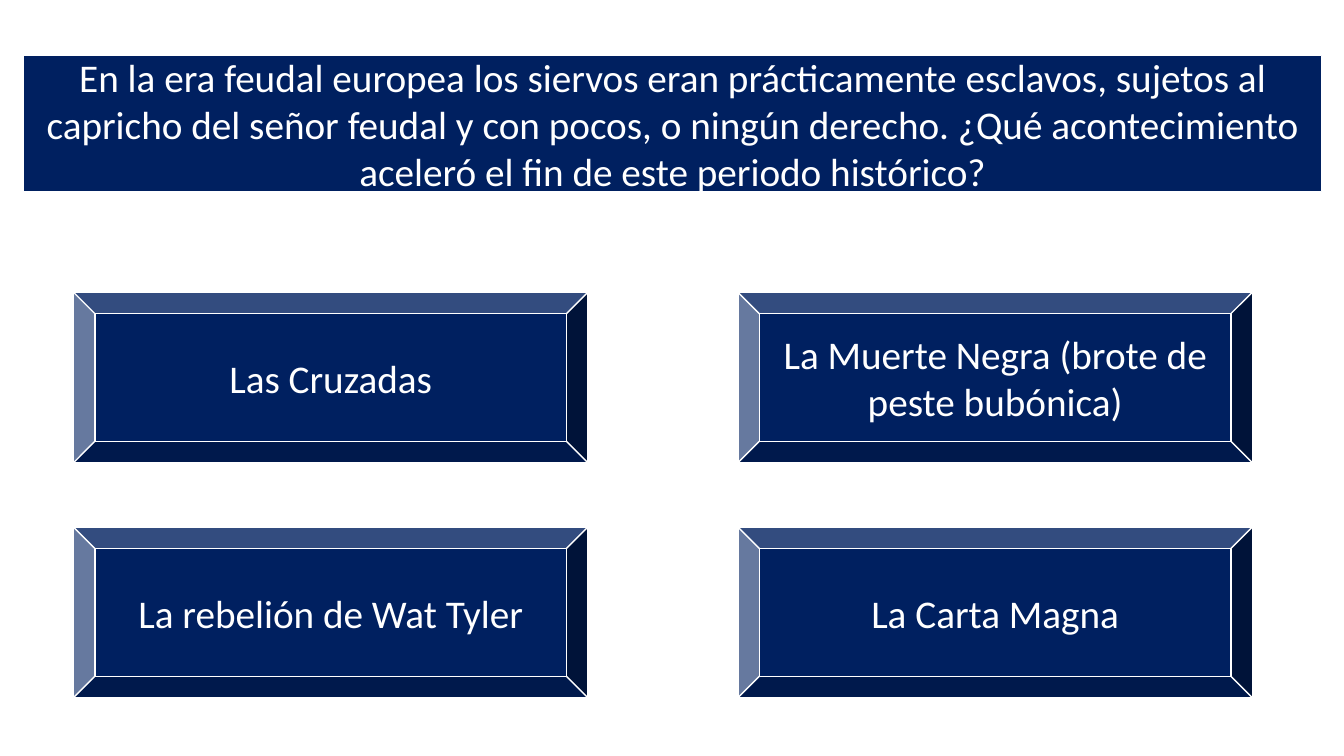
from dataclasses import dataclass

from pptx import Presentation
from pptx.dml.color import RGBColor
from pptx.enum.shapes import MSO_SHAPE as Shape
from pptx.enum.text import MSO_ANCHOR as Anchor, MSO_AUTO_SIZE as AutoSize, PP_ALIGN as Align
from pptx.util import Inches, Pt


@dataclass(frozen=True)
class Theme:
    navy: RGBColor = RGBColor(0x00, 0x20, 0x60)
    white: RGBColor = RGBColor(0xFF, 0xFF, 0xFF)
    font: str = "Calibri"
    text_size: Pt = Pt(28)
    line_width: Pt = Pt(1)


@dataclass(frozen=True)
class Grid:
    """Answer grid in inches: first cell, cell size and step between cells."""
    left: float = 0.73
    top: float = 2.9
    width: float = 5.1
    height: float = 1.69
    column_step: float = 6.59
    row_step: float = 2.33

    def cell(self, column, row):
        return (self.left + column * self.column_step,
                self.top + row * self.row_step, self.width, self.height)


def apply(target, values):
    for name, value in values.items():
        setattr(target, name, value)


class QuizSlide:
    def __init__(self, deck, theme, grid):
        self.theme, self.grid = theme, grid
        title_only = deck.slide_layouts[5]
        self.slide = deck.slides.add_slide(title_only)

    def style(self, box, text):
        """Give a box the navy fill, white outline and centred white text."""
        theme = self.theme
        box.fill.solid()
        box.fill.fore_color.rgb = theme.navy
        box.line.color.rgb = theme.white
        box.line.width = theme.line_width
        frame = box.text_frame
        frame.text = text
        apply(frame, {
            "word_wrap": True, "auto_size": AutoSize.NONE,
            "vertical_anchor": Anchor.MIDDLE,
            "margin_left": Inches(0.1), "margin_right": Inches(0.1),
            "margin_top": Inches(0.05), "margin_bottom": Inches(0.05),
        })
        para = frame.paragraphs[0]
        para.alignment = Align.CENTER
        span = para.runs[0]
        apply(span.font, {"name": theme.font, "size": theme.text_size})
        span.font.color.rgb = theme.white

    def question(self, text, left, top, width, height):
        title = self.slide.shapes.title
        apply(title, {"left": Inches(left), "top": Inches(top),
                      "width": Inches(width), "height": Inches(height)})
        self.style(title, text)

    def answer(self, text, column, row):
        place = map(Inches, self.grid.cell(column, row))
        button = self.slide.shapes.add_shape(Shape.BEVEL, *place)
        button.shadow.inherit = False
        self.style(button, text)


def main():
    deck = Presentation()
    apply(deck, {"slide_width": Inches(13.33), "slide_height": Inches(7.5)})
    quiz = QuizSlide(deck, Theme(), Grid())

    # Question banner
    quiz.question(
        "En la era feudal europea los siervos eran prácticamente esclavos, "
        "sujetos al capricho del señor feudal y con pocos, o ningún derecho. "
        "¿Qué acontecimiento aceleró el fin de este periodo histórico?",
        0.23, 0.55, 12.88, 1.35)

    # Answer buttons, two per row
    answers = ["Las Cruzadas", "La Muerte Negra (brote de peste bubónica)",
               "La rebelión de Wat Tyler", "La Carta Magna"]
    for index, text in enumerate(answers):
        row, column = divmod(index, 2)
        quiz.answer(text, column, row)

    deck.save("out.pptx")


if __name__ == "__main__":
    main()
